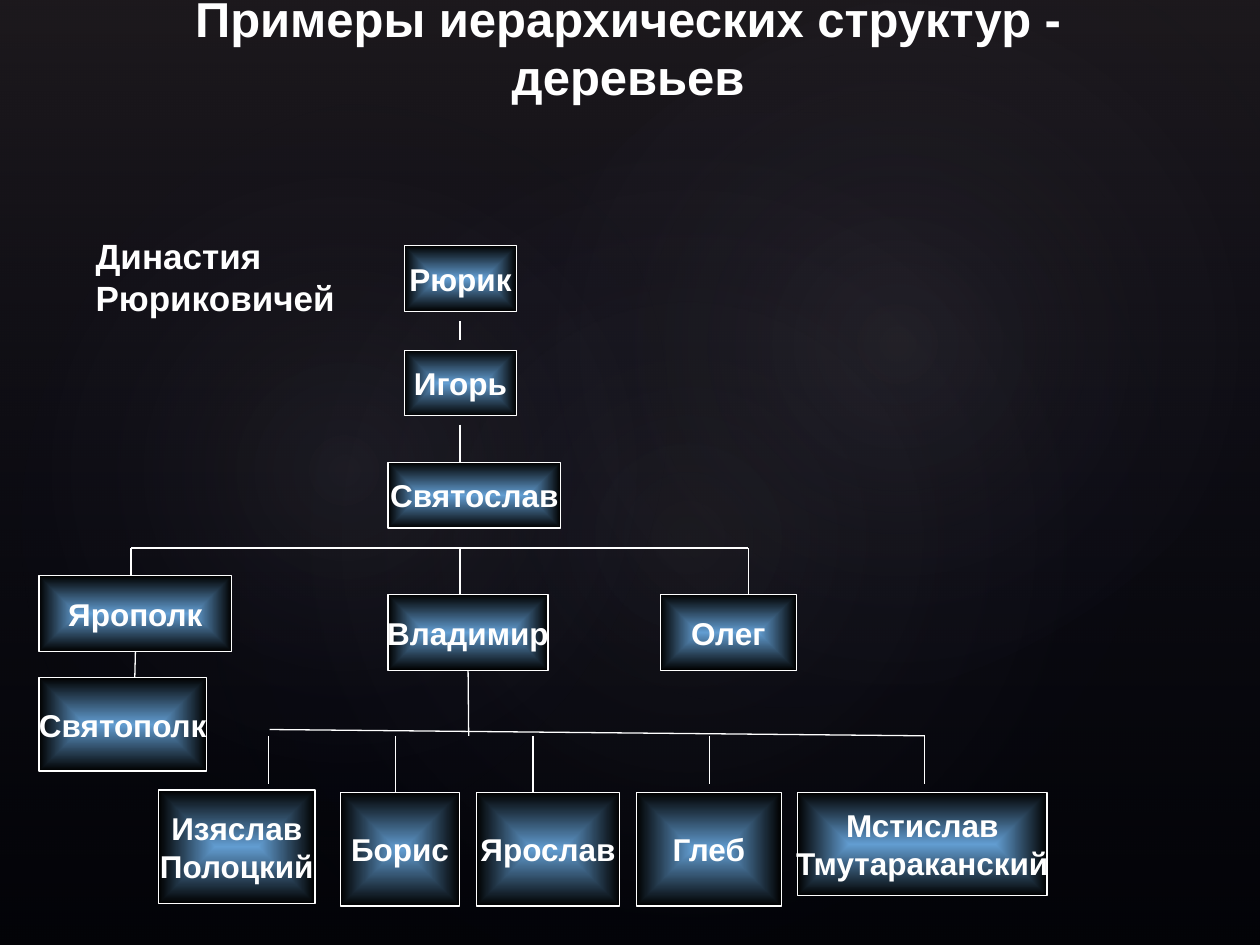
from lxml import etree
from pptx import Presentation
from pptx.dml.color import RGBColor
from pptx.enum.shapes import MSO_CONNECTOR, MSO_SHAPE
from pptx.enum.text import MSO_ANCHOR, MSO_AUTO_SIZE, PP_ALIGN
from pptx.oxml import parse_xml
from pptx.oxml.ns import nsdecls, qn
from pptx.util import Inches, Pt

RECT, OVAL = MSO_SHAPE.RECTANGLE, MSO_SHAPE.OVAL
STRAIGHT = MSO_CONNECTOR.STRAIGHT
CENTER, LEFT = PP_ALIGN.CENTER, PP_ALIGN.LEFT
MIDDLE, BOTTOM = MSO_ANCHOR.MIDDLE, MSO_ANCHOR.BOTTOM
COLORS = {"black": "000000", "white": "FFFFFF", "blue": "629DD1",
          "haze": "504652", "navy": "242852", "glow": "C4BCC6"}
WHITE = RGBColor.from_string(COLORS["white"])


def fill_gradient(shape, stops, shade):
    """Stops are (position %, colour name, opacity %)."""
    stop_xml = "".join(
        f'<a:gs pos="{pos * 1000}"><a:srgbClr val="{COLORS[color]}">'
        f'<a:alpha val="{opacity * 1000}"/></a:srgbClr></a:gs>'
        for pos, color, opacity in stops)
    if shade == "linear":
        shade_xml = '<a:lin ang="5400000" scaled="0"/>'
    else:
        shade_xml = (f'<a:path path="{shade}"><a:fillToRect l="50000" t="50000" '
                     'r="50000" b="50000"/></a:path>')
    shape._element.spPr.insert(2, parse_xml(
        f'<a:gradFill {nsdecls("a")} rotWithShape="1"><a:gsLst>{stop_xml}</a:gsLst>'
        f'{shade_xml}</a:gradFill>'))
    shape.shadow.inherit = False


def write(frame, lines, size, align):
    frame.text = "\n".join(lines)
    for paragraph in frame.paragraphs:
        paragraph.alignment = align
        font = paragraph.font
        font.name, font.size, font.bold = "Arial", Pt(size), True
        font.color.rgb = WHITE


prs = Presentation()
prs.slide_width, prs.slide_height = Inches(10), Inches(7.5)
slide = prs.slides.add_slide(prs.slide_layouts[5])
shapes = slide.shapes

# Dark background with a haze and three soft glows
slide.background.fill.solid()
slide.background.fill.fore_color.rgb = RGBColor.from_string(COLORS["black"])
haze = shapes.add_shape(RECT, 0, 0, prs.slide_width, prs.slide_height)
fill_gradient(haze, [(0, "haze", 36), (100, "navy", 10)], "linear")
haze.line.fill.background()
for *box, rotation, opacity in [(1.5, 1.14, 7.92, 6.24, 328.7, 7),
                                (-0.3, 1.28, 6.06, 4.9, 294.3, 8),
                                (3.58, 0.13, 7.09, 5.2, 328.7, 8)]:
    glow = shapes.add_shape(OVAL, *map(Inches, box))
    glow.rotation = rotation
    fill_gradient(glow, [(0, "glow", opacity), (58, "navy", 0), (100, "navy", 0)], "circle")
    glow.line.fill.background()

# Title, brought in front of the background
title = shapes.title
title.left, title.top, title.width, title.height = map(Inches, (1.04, 0.13, 7.89, 1.21))
heading = title.text_frame
write(heading, ["Примеры иерархических структур - деревьев"], 28, CENTER)
heading.auto_size = MSO_AUTO_SIZE.NONE
heading.vertical_anchor = BOTTOM
heading.margin_top, heading.margin_bottom = 0, Inches(0.5)
shapes._spTree.append(title._element)

# People: name lines, left, top, width, height
people = {}
for name, *box in [
    ("Владимир", 3.08, 4.72, 1.27, 0.6),
    ("Рюрик", 3.21, 1.95, 0.89, 0.52),
    ("Игорь", 3.21, 2.78, 0.89, 0.52),
    ("Святослав", 3.08, 3.67, 1.37, 0.52),
    ("Олег", 5.24, 4.72, 1.08, 0.6),
    ("Ярополк", 0.31, 4.57, 1.53, 0.6),
    ("Мстислав\nТмутараканский", 6.33, 6.29, 1.98, 0.82),
    ("Глеб", 5.05, 6.29, 1.15, 0.9),
    ("Ярослав", 3.78, 6.29, 1.14, 0.9),
    ("Борис", 2.7, 6.29, 0.95, 0.9),
    ("Святополк", 0.31, 5.38, 1.33, 0.74),
    ("Изяслав\nПолоцкий", 1.26, 6.27, 1.24, 0.9),
]:
    person = shapes.add_shape(RECT, *map(Inches, box))
    fill_gradient(person, [(0, "blue", 100), (100, "black", 100)], "rect")
    person.line.color.rgb, person.line.width = WHITE, Pt(0.75)
    write(person.text_frame, name.split("\n"), 18, CENTER)
    person.text_frame.word_wrap = False
    person.text_frame.vertical_anchor = MIDDLE
    people[name] = person

# Branches: x1, y1, x2, y2, line width, parent joined at its bottom side
trunk, sons_y, grandsons_y = 3.65, 4.35, 5.84
branches = [
    (trunk, 2.55, trunk, 2.7, 1.5, None),
    (trunk, 3.37, trunk, 3.67, 0.75, None),
    (1.04, sons_y, 5.94, sons_y, 0.75, None),
    (2.14, 5.79, 7.34, grandsons_y, 0.75, None),
    (3.72, 5.32, 3.72, grandsons_y, 0.75, "Владимир"),
    (1.08, 5.17, 1.07, 5.38, 0.75, "Ярополк"),
]
branches += [(x, sons_y, x, end, 0.75, None)
             for x, end in [(1.04, 4.57), (trunk, 4.72), (5.94, 4.72)]]
branches += [(x, grandsons_y, x, end, 0.75, None)
             for x, end in [(2.13, 6.22), (3.14, 6.29), (4.23, 6.29),
                            (5.63, 6.22), (7.34, 6.22)]]
for *ends, width, parent in branches:
    branch = shapes.add_connector(STRAIGHT, *map(Inches, ends))
    if parent:
        branch.begin_connect(people[parent], 2)
    branch.line.color.rgb, branch.line.width = WHITE, Pt(width)
    etree.SubElement(branch._element.spPr, qn("a:effectLst"))

# Dynasty caption
dynasty = shapes.add_textbox(*map(Inches, (0.66, 1.81, 2.29, 0.77))).text_frame
dynasty.word_wrap = True
write(dynasty, ["Династия Рюриковичей"], 20, LEFT)

prs.save("out.pptx")
